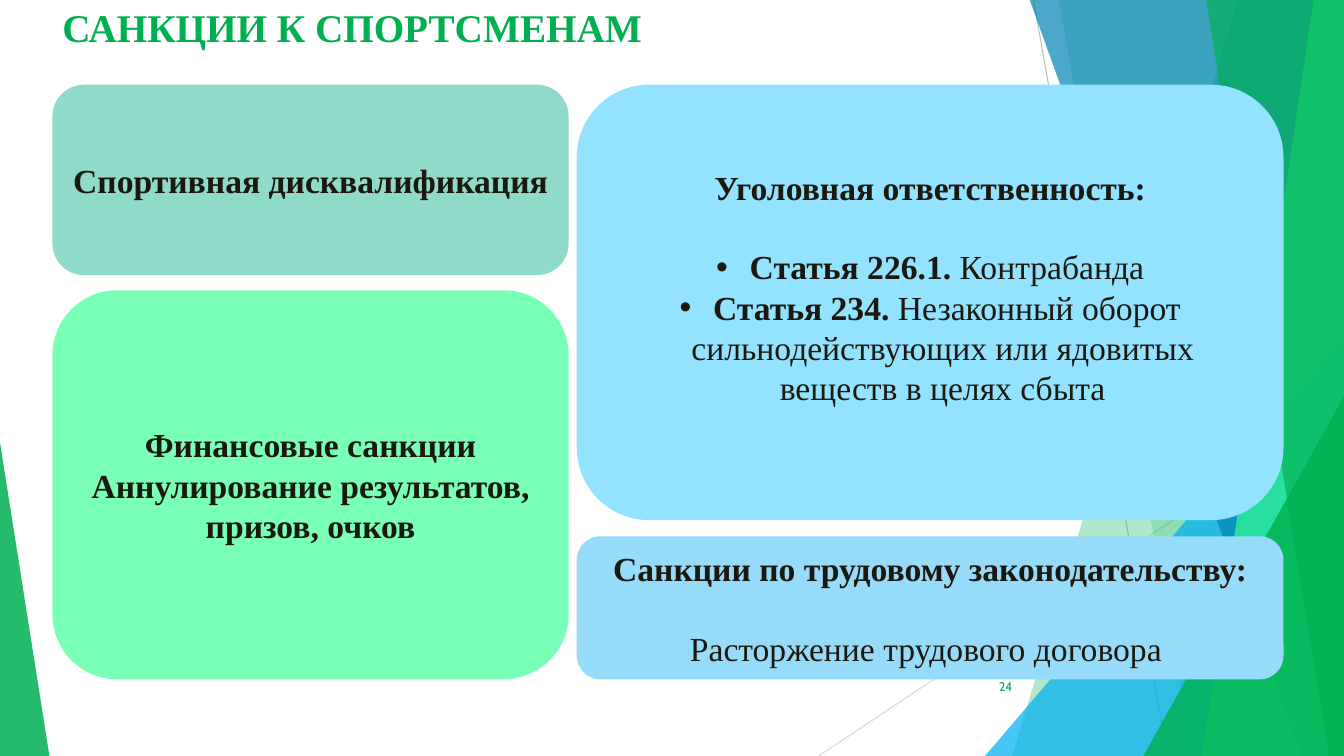
"""Builds the slide on sanctions applied to athletes."""
from lxml import etree
from pptx import Presentation
from pptx.dml.color import RGBColor
from pptx.enum.shapes import MSO_CONNECTOR, MSO_SHAPE
from pptx.enum.text import MSO_ANCHOR, PP_ALIGN
from pptx.oxml.ns import qn
from pptx.util import Inches, Pt

LEFT, CENTER, RIGHT = PP_ALIGN.LEFT, PP_ALIGN.CENTER, PP_ALIGN.RIGHT
TOP, MIDDLE = MSO_ANCHOR.TOP, MSO_ANCHOR.MIDDLE
STRAIGHT = MSO_CONNECTOR.STRAIGHT
ROUNDED, TRIANGLE = MSO_SHAPE.ROUNDED_RECTANGLE, MSO_SHAPE.ISOSCELES_TRIANGLE

WIDTH, HEIGHT, EDGE = 13.33, 7.5, -0.01
SERIF, SANS = "Times New Roman", "Cabin"
GREEN, INK = "00B050", "1B190F"
BULLET_INDENT = 0.25

RAYS = [
    ((10.25, 0), (11.58, HEIGHT), "BFBFBF"),
    ((WIDTH, 4.03), (8.12, HEIGHT), "D9D9D9"),
]
# kind, geometry, colour, opacity in percent
FACETS = [
    ("band", (12.28, 10.04), GREEN, 30),
    ("band", (10.5, 11.83), GREEN, 20),
    ("triangle", (9.77, 3.33, 3.56, 4.17, 1), "00B0F0", 72),
    ("band", (10.21, 12.91), "0084B4", 70),
    ("band", (13.03, 11.92), "37FF92", 70),
    ("band", (11.96, 13.18), GREEN, 65),
    ("triangle", (11.34, 3.93, 1.99, 3.57, 1), GREEN, 80),
    ("triangle", (0, 4.39, 0.49, 3.11, 0), GREEN, 85),
]
LABELS = [
    ((0.52, -0.02, 11.1, 0.68), "САНКЦИИ К СПОРТСМЕНАМ", LEFT, TOP,
     {"size": Pt(28), "name": SERIF, "bold": True}),
    ((9.39, 6.61, 0.75, 0.4), "24", RIGHT, MIDDLE,
     {"size": Pt(9), "name": SANS, "bold": False}),
]
# place, fill, bottom inset, paragraphs: (bold text, regular text, bulleted, space after)
CARDS = [
    ((0.52, 0.84, 5.12, 1.89), "8FDAC8", 0.05,
     [("Спортивная дисквалификация", "", False, 0)]),
    ((5.72, 0.84, 7.01, 4.32), "93E2FF", 0.35,
     [("Уголовная ответственность:", "", False, 28),
      (" Статья 226.1. ", "Контрабанда", True, 0),
      (" Статья 234. ", "Незаконный оборот сильнодействующих или ядовитых "
       "веществ в целях сбыта", True, 0)]),
    ((0.52, 2.88, 5.12, 3.86), "79FFB6", 0.05,
     [("Финансовые санкции", "", False, 0),
      ("Аннулирование результатов, призов, очков", "", False, 0)]),
    ((5.72, 5.32, 7.01, 1.42), "97DBFB", 0.05,
     [("Санкции по трудовому законодательству:", "", False, 28),
      ("", "Расторжение трудового договора ", False, 0)]),
]


def color(value):
    return RGBColor.from_string(value)


def paint(shape, fill, opacity=100):
    shape.shadow.inherit = False
    shape.fill.solid()
    shape.fill.fore_color.rgb = color(fill)
    shape.line.fill.background()
    if opacity < 100:
        tone = shape.fill._xPr.find(qn("a:solidFill"))[0]
        etree.SubElement(tone, qn("a:alpha"), val=str(opacity * 1000))


def add_ray(page, start, end, tone):
    ray = page.shapes.add_connector(STRAIGHT, *map(Inches, start + end))
    ray.line.color.rgb = color(tone)
    ray.line.width = Pt(0.75)
    etree.SubElement(ray._element.spPr, qn("a:effectLst"))


def add_band(page, top_left, bottom_left):
    corners = [(top_left, EDGE), (WIDTH, EDGE), (WIDTH, HEIGHT), (bottom_left, HEIGHT)]
    points = [(Inches(x), Inches(y)) for x, y in corners]
    builder = page.shapes.build_freeform(*points[0])
    builder.add_line_segments(points[1:], close=True)
    return builder.convert_to_shape()


def add_triangle(page, left, top, width, height, apex):
    triangle = page.shapes.add_shape(TRIANGLE, *map(Inches, (left, top, width, height)))
    triangle.adjustments[0] = apex
    return triangle


def add_span(para, text, tone, style):
    span = para.add_run()
    span.text = text
    span.font.color.rgb = color(tone)
    for name, value in style.items():
        setattr(span.font, name, value)


def add_bullet(para):
    properties = para._p.get_or_add_pPr()
    indent = Inches(BULLET_INDENT)
    properties.set("marL", str(indent))
    properties.set("indent", str(-indent))
    etree.SubElement(properties, qn("a:buFont"), typeface="Arial")
    etree.SubElement(properties, qn("a:buChar"), char="•")


def add_label(page, place, text, align, anchor, style):
    box = page.shapes.add_textbox(*map(Inches, place))
    frame = box.text_frame
    frame.word_wrap = True
    frame.vertical_anchor = anchor
    para = frame.paragraphs[0]
    para.alignment = align
    add_span(para, text, GREEN, style)


def add_card(page, place, fill, bottom, lines):
    card = page.shapes.add_shape(ROUNDED, *map(Inches, place))
    paint(card, fill)
    frame = card.text_frame
    frame.word_wrap = True
    frame.vertical_anchor = MIDDLE
    frame.margin_bottom = Inches(bottom)
    for index, (strong, plain, bulleted, gap) in enumerate(lines):
        para = frame.add_paragraph() if index else frame.paragraphs[0]
        para.alignment = CENTER
        para.space_after = Pt(gap)
        if bulleted:
            add_bullet(para)
        for text, bold in ((strong, True), (plain, False)):
            if text:
                add_span(para, text, INK, {"size": Pt(24), "name": SERIF, "bold": bold})


def main():
    deck = Presentation()
    deck.slide_width, deck.slide_height = Inches(WIDTH), Inches(HEIGHT)
    page = deck.slides.add_slide(deck.slide_layouts[6])
    for ray in RAYS:
        add_ray(page, *ray)
    makers = {"band": add_band, "triangle": add_triangle}
    for kind, geometry, tone, opacity in FACETS:
        paint(makers[kind](page, *geometry), tone, opacity)
    for label in LABELS:
        add_label(page, *label)
    for card in CARDS:
        add_card(page, *card)
    deck.save("out.pptx")


if __name__ == "__main__":
    main()
